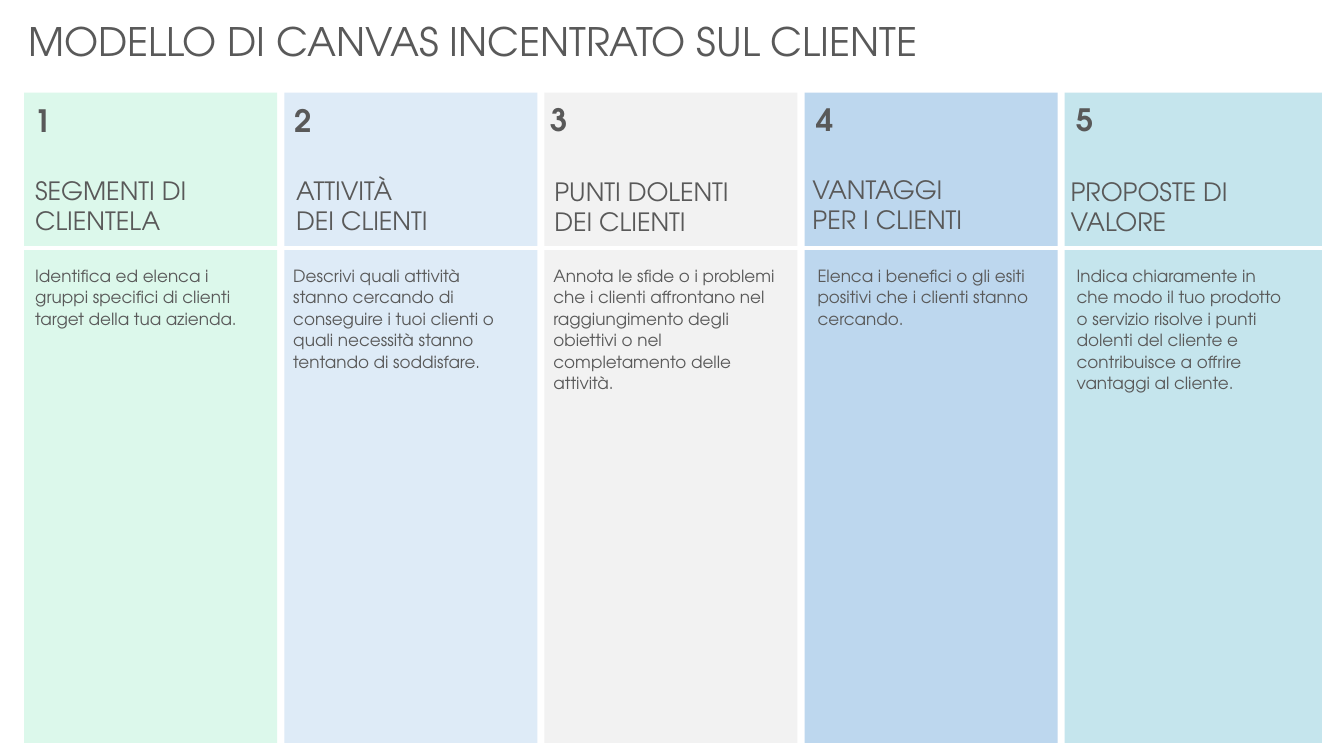
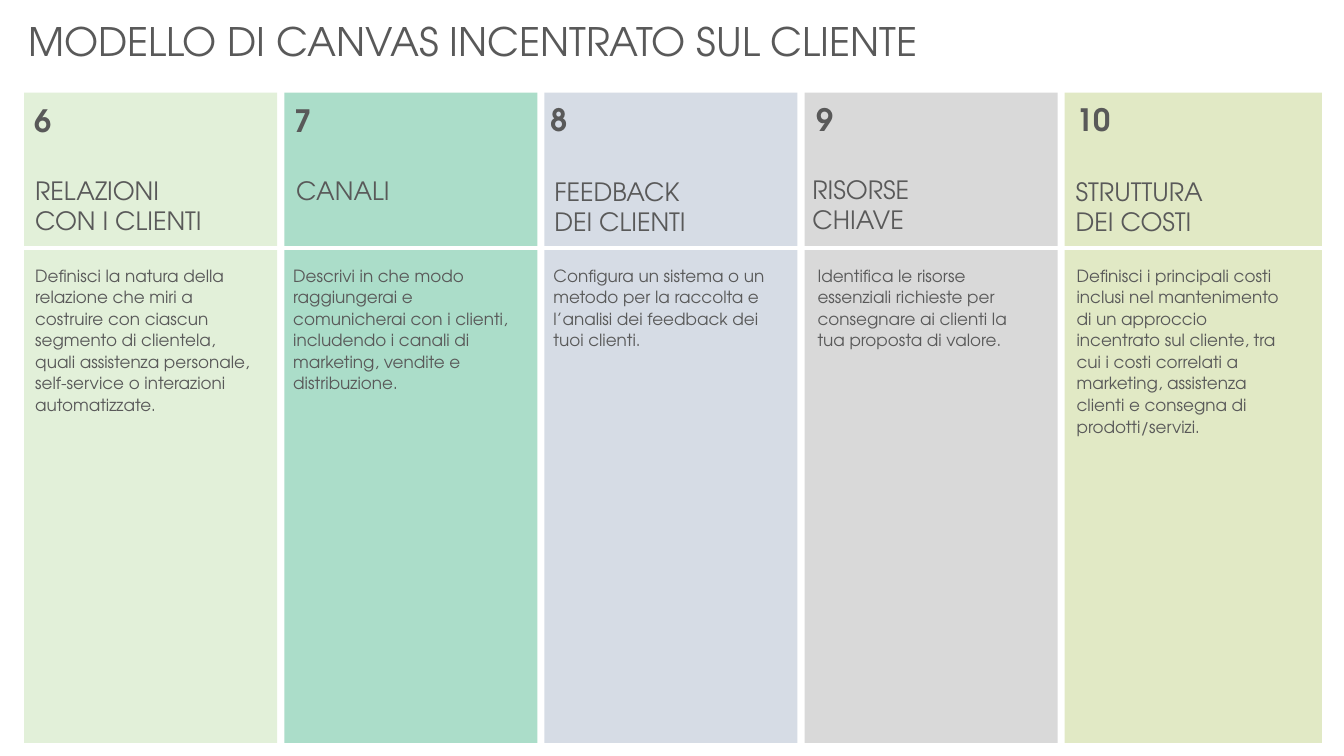
"""Build a two-slide customer-centred canvas with five numbered columns per slide."""

import pptx
import pptx.dml.color
import pptx.enum.shapes
import pptx.enum.text
import pptx.oxml
import pptx.util
from pptx.util import Inches

FONT = "TeX Gyre Adventor"
TEXT_COLOUR = "595959"
TITLE = "MODELLO DI CANVAS INCENTRATO SUL CLIENTE"
BAND_LEFT, BAND_TOP, BAND_PITCH, BAND_HEIGHT = 0.24, 0.92, 2.58, 6.45
BAND_WIDTHS = [2.51, 2.51, 2.51, 2.51, 2.55]
NUMBER_LEFTS = [0.24, 2.82, 5.36, 8, 10.58]
NUMBER_TOPS = [0.93, 0.93, 0.92, 0.92, 0.92]
HEADING_TOPS = [1.69, 1.69, 1.7, 1.68, 1.7]
DESCRIPTION_LEFTS = [0.25, 2.81, 5.39, 8.01, 10.58]
DESCRIPTION_WIDTHS = [2.38, 2.35, 2.48, 2.38, 2.25]

SLIDES = [
    [
        ("DCF8EB", 0.25, 2.5, "SEGMENTI DI CLIENTELA",
         "Identifica ed elenca i gruppi specifici di clienti target della tua azienda."),
        ("DEEBF7", 2.84, 2.5, "ATTIVITÀ\nDEI CLIENTI",
         "Descrivi quali attività stanno cercando di conseguire i tuoi clienti "
         "o quali necessità stanno tentando di soddisfare."),
        ("F2F2F2", 5.4, 2.5, "PUNTI DOLENTI\nDEI CLIENTI",
         "Annota le sfide o i problemi che i clienti affrontano nel raggiungimento "
         "degli obiettivi o nel completamento delle attività."),
        ("BDD7EE", 7.96, 2.5, "VANTAGGI\nPER I CLIENTI",
         "Elenca i benefici o gli esiti positivi che i clienti stanno cercando."),
        ("C5E5ED", 10.52, 2.5, "PROPOSTE DI VALORE",
         "Indica chiaramente in che modo il tuo prodotto o servizio risolve i punti "
         "dolenti del cliente e contribuisce a offrire vantaggi al cliente."),
    ],
    [
        ("E2F0D9", 0.25, 2.04, "RELAZIONI CON I CLIENTI",
         "Definisci la natura della relazione che miri a costruire con ciascun segmento "
         "di clientela, quali assistenza personale, self-service o interazioni automatizzate."),
        ("ABDDC9", 2.84, 2.5, "CANALI",
         "Descrivi in che modo raggiungerai e comunicherai con i clienti, "
         "includendo i canali di marketing, vendite e distribuzione."),
        ("D6DCE5", 5.4, 2.5, "FEEDBACK\nDEI CLIENTI",
         "Configura un sistema o un metodo per la raccolta e l’analisi "
         "dei feedback dei tuoi clienti."),
        ("D9D9D9", 7.96, 2.5, "RISORSE\nCHIAVE",
         "Identifica le risorse essenziali richieste per consegnare ai clienti "
         "la tua proposta di valore."),
        ("E1E9C5", 10.57, 2.45, "STRUTTURA\nDEI COSTI",
         "Definisci i principali costi inclusi nel mantenimento di un approccio "
         "incentrato sul cliente, tra cui i costi correlati a marketing, assistenza "
         "clienti e consegna di prodotti/servizi."),
    ],
]


def colour(hex_string):
    return pptx.dml.color.RGBColor.from_string(hex_string)


def write_text(shape, box, text, size, bold=False, spaced=False):
    shape.left, shape.top, shape.width, shape.height = map(Inches, box)
    frame = shape.text_frame
    frame.word_wrap = True
    frame.auto_size = pptx.enum.text.MSO_AUTO_SIZE.NONE
    frame.vertical_anchor = pptx.enum.text.MSO_ANCHOR.TOP
    paragraph = frame.paragraphs[0]
    paragraph.alignment = pptx.enum.text.PP_ALIGN.LEFT
    if spaced:
        paragraph.line_spacing = 1.07
        paragraph.space_after = pptx.util.Pt(8)
    for index, line in enumerate(text.split("\n")):
        if index:
            paragraph.add_line_break()
        run = paragraph.add_run()
        run.text = line
        run.font.name = FONT
        run.font.size = pptx.util.Pt(size)
        run.font.bold = bold
        run.font.color.rgb = colour(TEXT_COLOUR)


presentation = pptx.Presentation()
presentation.slide_width = Inches(13.33)
presentation.slide_height = Inches(7.5)
title_only = presentation.slide_layouts[5]
number = 0

for cards in SLIDES:
    slide = presentation.slides.add_slide(title_only)
    shapes = slide.shapes
    write_text(shapes.title, (0.18, 0.12, 12.95, 0.57), TITLE, 28)

    for column, card in enumerate(cards):
        band = shapes.add_shape(
            pptx.enum.shapes.MSO_SHAPE.RECTANGLE,
            Inches(BAND_LEFT + column * BAND_PITCH), Inches(BAND_TOP),
            Inches(BAND_WIDTHS[column]), Inches(BAND_HEIGHT))
        band.shadow.inherit = False
        band.fill.solid()
        band.fill.fore_color.rgb = colour(card[0])
        band.line.fill.background()

    divider = shapes.add_connector(
        pptx.enum.shapes.MSO_CONNECTOR.STRAIGHT,
        Inches(BAND_LEFT), Inches(2.46), Inches(13.2), Inches(2.46))
    divider.line.color.rgb = colour("FFFFFF")
    divider.line.width = pptx.util.Pt(2.25)
    divider._element.spPr.append(pptx.oxml.parse_xml(
        '<a:effectLst xmlns:a="http://schemas.openxmlformats.org/drawingml/2006/main"/>'))

    for column, (_, heading_left, heading_width, heading, description) in enumerate(cards):
        number += 1
        number_box = (NUMBER_LEFTS[column], NUMBER_TOPS[column], 0.6, 0.64)
        heading_box = (heading_left, HEADING_TOPS[column], heading_width, 0.71)
        description_box = (DESCRIPTION_LEFTS[column], 2.57, DESCRIPTION_WIDTHS[column], 1.57)
        for box, text, size, bold, spaced in [
            (number_box, str(number), 22, True, True),
            (heading_box, heading, 18, False, False),
            (description_box, description, 12, False, True),
        ]:
            text_box = shapes.add_textbox(0, 0, 0, 0)
            write_text(text_box, box, text, size, bold, spaced)

presentation.save("out.pptx")
